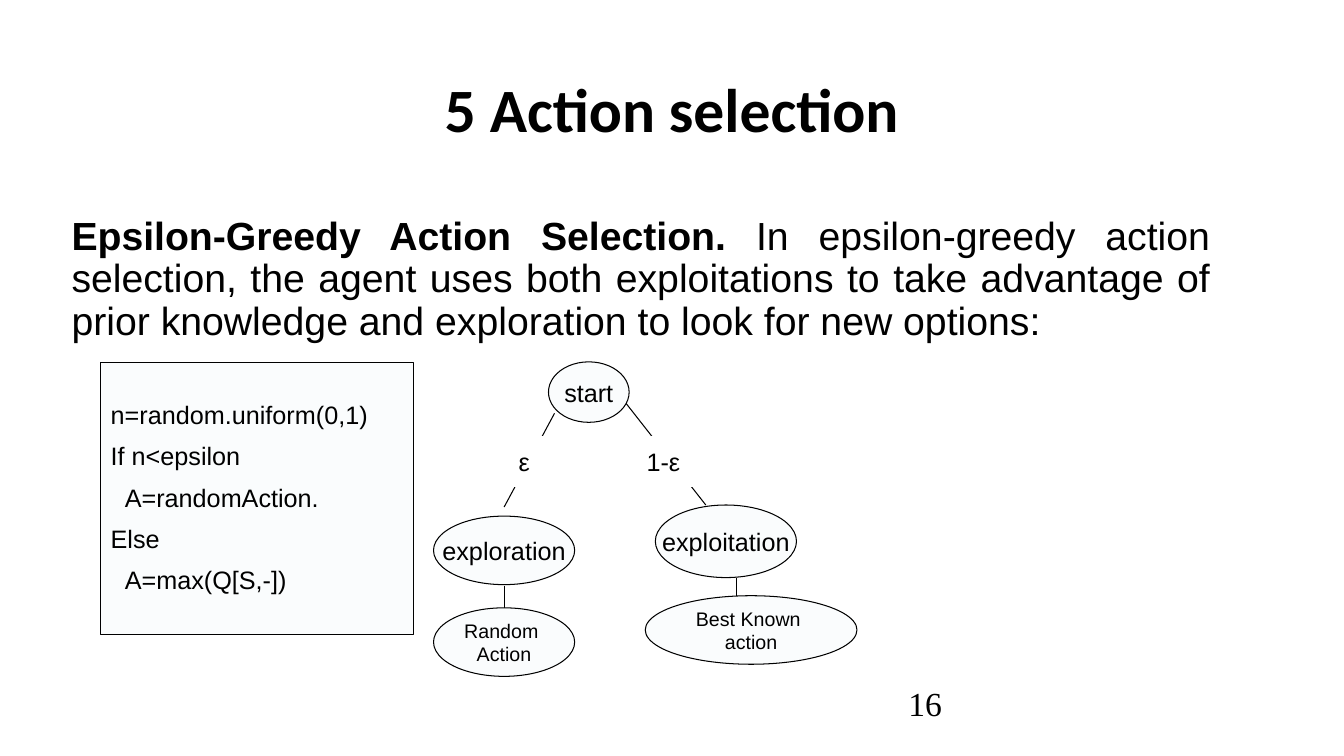
"""Build the slide on epsilon-greedy action selection."""
import dataclasses

import pptx
import pptx.dml.color
import pptx.enum.shapes
import pptx.enum.text
import pptx.util
from lxml import etree

BLACK = pptx.dml.color.RGBColor(0x00, 0x00, 0x00)
WHITE = pptx.dml.color.RGBColor(0xFF, 0xFF, 0xFF)
PALE = pptx.dml.color.RGBColor(0xFA, 0xFC, 0xFD)

SHAPE = pptx.enum.shapes.MSO_SHAPE
ALIGN = pptx.enum.text.PP_ALIGN
ANCHOR = pptx.enum.text.MSO_ANCHOR
CELL = pptx.util.Inches(0.1)
THIN = pptx.util.Pt(0.75)
DRAWING = "http://schemas.openxmlformats.org/drawingml/2006/main"


@dataclasses.dataclass(frozen=True)
class Area:
    """A place on the slide, in grid columns and rows."""
    column: float
    row: float
    columns: float
    rows: float


@dataclasses.dataclass(frozen=True)
class Node:
    """One labelled shape of the decision tree."""
    lines: tuple[str, ...]
    area: Area
    size: int = 18
    outline: int = SHAPE.OVAL
    fill: pptx.dml.color.RGBColor = PALE
    border: pptx.dml.color.RGBColor = BLACK


@dataclasses.dataclass(frozen=True)
class Branch:
    """A straight line between two grid points."""
    start: tuple[float, float]
    end: tuple[float, float]


@dataclasses.dataclass(frozen=True)
class CodeLine:
    """A line of pseudocode and its nesting depth."""
    text: str
    depth: int = 0


HEADING = Area(9.2, 4, 114.9, 14.4)
EXPLANATION = Area(6.1, 21, 114.9, 47.5)
PAGE_NUMBER = Area(89.1, 67.3, 41.9, 4.6)
PSEUDOCODE = Area(10, 36, 31, 27)

BRANCHES = (
    Branch((55, 41), (50, 50.3)),
    Branch((62, 39.9), (70, 50.1)),
    Branch((50, 58.1), (50, 60.3)),
    Branch((73, 57.3), (73, 59.1)),
)
NODES = (
    Node(("start",), Area(54.4, 35.9, 8, 6)),
    Node(("ε",), Area(48, 43.3, 8, 5), 18, SHAPE.RECTANGLE, WHITE, WHITE),
    Node(("1-ε",), Area(61.8, 43.3, 8, 5), 18, SHAPE.RECTANGLE, WHITE, WHITE),
    Node(("exploration",), Area(43, 51.2, 14, 6.8)),
    Node(("exploitation",), Area(65, 50.1, 14, 7.2)),
    Node(("Random ", "Action"), Area(43, 60.3, 14, 6.8), 14),
    Node(("Best Known ", "action"), Area(64, 59.1, 21, 6.8), 14),
)
CODE = (
    CodeLine("n=random.uniform(0,1)"),
    CodeLine("If n<epsilon"),
    CodeLine("A=randomAction.", 1),
    CodeLine("Else"),
    CodeLine("A=max(Q[S,-])", 1),
)


def cells(count: float) -> int:
    """Turn a number of grid cells into a length."""
    return round(count * CELL)


def bounds(area: Area) -> tuple[int, int, int, int]:
    """Return left, top, width and height of an area."""
    return cells(area.column), cells(area.row), cells(area.columns), cells(area.rows)


def place(placeholder, area: Area) -> None:
    """Move a placeholder to an area."""
    (placeholder.left, placeholder.top,
     placeholder.width, placeholder.height) = bounds(area)
    placeholder.text_frame.auto_size = pptx.enum.text.MSO_AUTO_SIZE.NONE


def write(paragraph, text: str, size: int, font: str = "Arial", bold: bool = False) -> None:
    """Add one formatted run."""
    run = paragraph.add_run()
    run.text = text
    run.font.size = pptx.util.Pt(size)
    run.font.name = font
    run.font.bold = bold
    run.font.color.rgb = BLACK


def justify(paragraph) -> None:
    """Give a paragraph the spacing of running text."""
    paragraph.alignment = ALIGN.JUSTIFY
    paragraph.line_spacing = 0.9
    paragraph.space_before = pptx.util.Pt(10)


def draw_box(slide, outline: int, area: Area, fill, border):
    """Draw a filled and outlined shape and return its text frame."""
    box = slide.shapes.add_shape(outline, *bounds(area))
    box.shadow.inherit = False
    box.fill.solid()
    box.fill.fore_color.rgb = fill
    box.line.color.rgb = border
    box.line.width = THIN
    box.text_frame.vertical_anchor = ANCHOR.MIDDLE
    return box.text_frame


def draw_node(slide, node: Node) -> None:
    """Draw a node with its centred label."""
    label = draw_box(slide, node.outline, node.area, node.fill, node.border)
    label.word_wrap = False
    for position, line in enumerate(node.lines):
        paragraph = label.add_paragraph() if position else label.paragraphs[0]
        paragraph.alignment = ALIGN.CENTER
        write(paragraph, line, node.size)


def draw_branch(slide, branch: Branch) -> None:
    """Draw a thin line without shadow."""
    line = slide.shapes.add_connector(
        pptx.enum.shapes.MSO_CONNECTOR.STRAIGHT,
        *map(cells, branch.start + branch.end))
    line.line.color.rgb = BLACK
    line.line.width = THIN
    etree.SubElement(line._element.spPr, f"{{{DRAWING}}}effectLst")


def draw_code(slide) -> None:
    """Draw the pseudocode panel."""
    listing = draw_box(slide, SHAPE.RECTANGLE, PSEUDOCODE, PALE, BLACK)
    listing.word_wrap = True
    for position, line in enumerate(CODE):
        paragraph = listing.add_paragraph() if position else listing.paragraphs[0]
        justify(paragraph)
        if line.depth:
            paragraph._p.get_or_add_pPr().set("marL", str(cells(1.4 * line.depth)))
        write(paragraph, line.text, 18)


def fill_text(slide) -> None:
    """Write the title, the explanation and the page number."""
    title = slide.shapes.title
    place(title, HEADING)
    title.text_frame.vertical_anchor = ANCHOR.MIDDLE
    heading = title.text_frame.paragraphs[0]
    heading.alignment = ALIGN.CENTER
    heading.line_spacing = 0.9
    write(heading, "5 Action selection", 44, "Calibri", True)

    body = slide.placeholders[1]
    place(body, EXPLANATION)
    explanation = body.text_frame.paragraphs[0]
    justify(explanation)
    properties = explanation._p.get_or_add_pPr()
    properties.set("marL", "0")
    properties.set("indent", "0")
    etree.SubElement(properties, f"{{{DRAWING}}}buNone")
    write(explanation, "Epsilon-Greedy Action Selection. ", 28, bold=True)
    write(explanation, "In epsilon-greedy action selection, the agent uses both "
          "exploitations to take advantage of prior knowledge and exploration "
          "to look for new options:", 28)

    number = slide.shapes.add_textbox(*bounds(PAGE_NUMBER)).text_frame
    number.word_wrap = True
    write(number.paragraphs[0], "16", 24, "Times New Roman")


def main() -> None:
    """Build and save the presentation."""
    deck = pptx.Presentation()
    deck.slide_width = pptx.util.Inches(13.33)
    deck.slide_height = pptx.util.Inches(7.5)
    slide = deck.slides.add_slide(deck.slide_layouts[1])
    fill_text(slide)
    for branch in BRANCHES:
        draw_branch(slide, branch)
    for node in NODES:
        draw_node(slide, node)
    draw_code(slide)
    deck.save("out.pptx")


if __name__ == "__main__":
    main()
